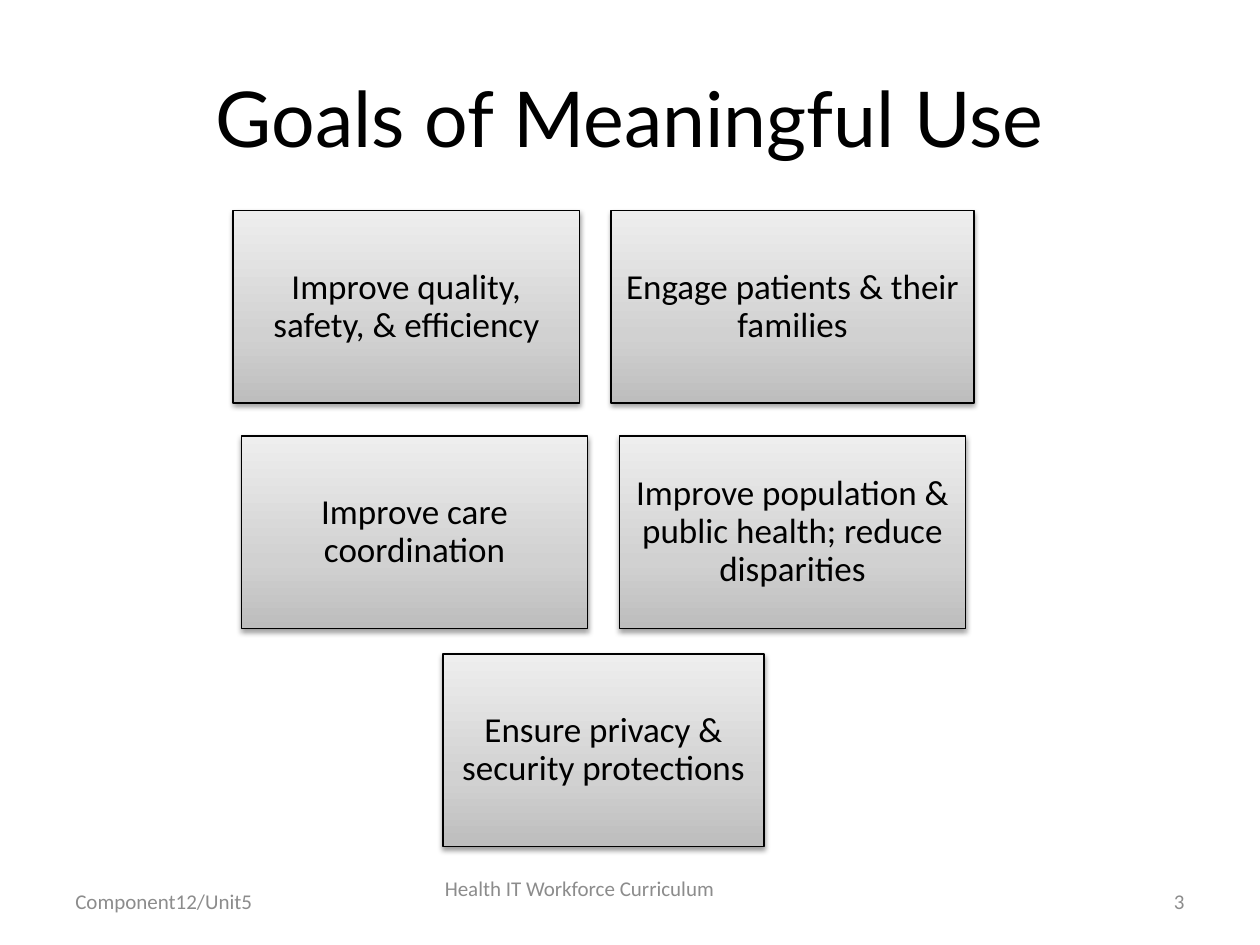
"""Build the slide on the goals of meaningful use."""
from lxml.etree import fromstring
from pptx import Presentation
from pptx.dml.color import RGBColor
from pptx.enum.shapes import MSO_SHAPE
from pptx.enum.text import MSO_ANCHOR, PP_ALIGN
from pptx.oxml.ns import qn
from pptx.util import Inches, Pt

TITLE = "Goals of Meaningful Use"
ROWS = [
    (1.67, [("Improve quality, safety, & efficiency", 2.75),
            ("Engage patients & their families", 2.88)]),
    (3.46, [("Improve care coordination", 2.75),
            ("Improve population & public health; reduce disparities", 2.75)]),
    (5.19, [("Ensure privacy & security protections", 2.55)]),
]
FOOT = [
    ("Component12/Unit5", 0.5, 6.95, 2.33, PP_ALIGN.LEFT),
    ("Health IT Workforce Curriculum", 3.35, 6.85, 2.5, PP_ALIGN.CENTER),
    ("3", 7.17, 6.95, 2.33, PP_ALIGN.RIGHT),
]
COLORS = {"ink": "000000", "foot": "8C8C8C",
          "low": "BDBDBD", "mid": "D1D1D1", "top": "EEEEEE"}
STOPS = [(0, "low"), (35, "mid"), (100, "top")]
MID, GAP, HIGH, INSET = 4.79, 0.25, 1.53, 0.08
NS = 'xmlns:a="http://schemas.openxmlformats.org/drawingml/2006/main"'


def color(name):
    return RGBColor.from_string(COLORS[name])


def write(shape, text, size, face, ink, align):
    frame = shape.text_frame
    frame.text = text
    frame.word_wrap = True
    frame.vertical_anchor = MSO_ANCHOR.MIDDLE
    para = frame.paragraphs[0]
    para.alignment = align
    para.font.size = Pt(size)
    para.font.name = face
    para.font.color.rgb = color(ink)
    return frame


def shade(box):
    stops = "".join(
        f'<a:gs pos="{pos * 1000}"><a:srgbClr val="{COLORS[name]}"/></a:gs>'
        for pos, name in STOPS)
    grad = fromstring(f'<a:gradFill {NS} rotWithShape="1"><a:gsLst>{stops}'
                      '</a:gsLst><a:lin ang="16200000" scaled="0"/></a:gradFill>')
    props = box._element.spPr
    props.find(qn("a:prstGeom")).addnext(grad)
    box.shadow.inherit = False
    props.find(qn("a:effectLst")).append(fromstring(
        f'<a:outerShdw {NS} blurRad="{Pt(3.1)}" dist="{Pt(1.6)}" dir="5400000" '
        f'rotWithShape="0"><a:srgbClr val="{COLORS["ink"]}">'
        '<a:alpha val="38000"/></a:srgbClr></a:outerShdw>'))


def add_goal(slide, text, left, top, wide):
    box = slide.shapes.add_shape(
        MSO_SHAPE.RECTANGLE, *map(Inches, (left, top, wide, HIGH)))
    box.line.color.rgb = color("ink")
    box.line.width = Pt(0.75)
    shade(box)
    frame = write(box, text, 20, "Calibri", "ink", PP_ALIGN.CENTER)
    frame.margin_left = frame.margin_right = Inches(INSET)
    frame.margin_top = frame.margin_bottom = Inches(INSET)
    frame.paragraphs[0].line_spacing = 0.9


def main():
    deck = Presentation()
    deck.slide_width, deck.slide_height = Inches(10), Inches(7.5)
    slide = deck.slides.add_slide(deck.slide_layouts[5])
    title = slide.shapes.title
    title.left, title.top, title.width, title.height = map(
        Inches, (0.5, 0.3, 9, 1.25))
    write(title, TITLE, 44, "Lato", "ink", PP_ALIGN.CENTER)
    for top, goals in ROWS:
        total = sum(wide for _, wide in goals) + GAP * (len(goals) - 1)
        left = MID - total / 2
        for text, wide in goals:
            add_goal(slide, text, left, top, wide)
            left += wide + GAP
    for text, left, top, wide, align in FOOT:
        box = slide.shapes.add_textbox(*map(Inches, (left, top, wide, 0.4)))
        write(box, text, 12, "Calibri", "foot", align)
    deck.save("out.pptx")


if __name__ == "__main__":
    main()
